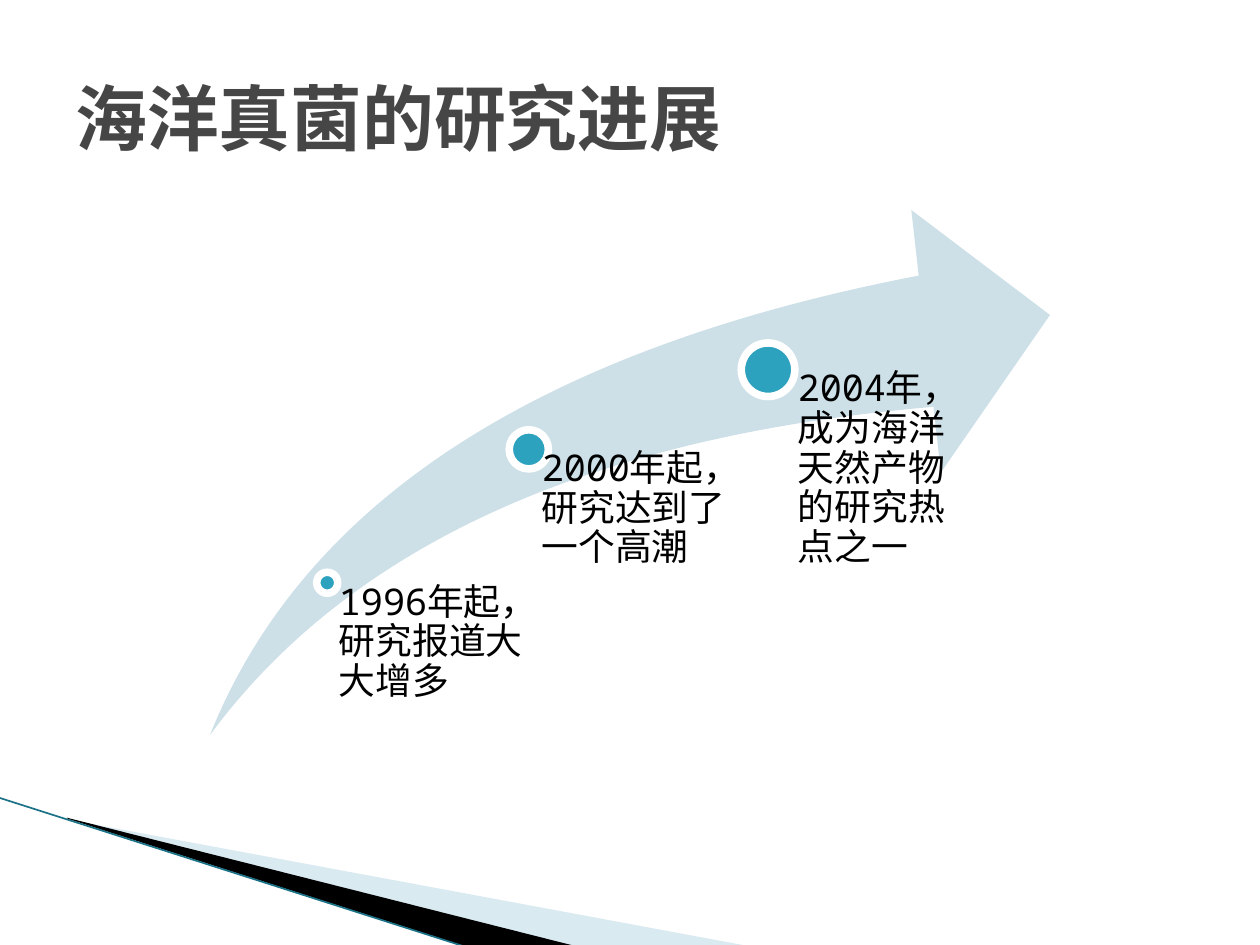
import lxml.etree
import pptx
import pptx.dml.color
import pptx.enum.shapes
import pptx.enum.text
import pptx.oxml.ns
import pptx.util

FONT = "Noto Sans Mono"
ACCENT = "2DA2BF"
MILESTONES = [
    ((181, 327, 12), (187.2, 333.4, 111.6, 86.4), 6.5, "1996年起，研究报道大大增多"),
    ((291, 245.6, 22.4), (297.4, 257, 124.6, 163.4), 12.2, "2000年起，研究达到了一个高潮"),
    ((423.6, 196, 30.6), (439.2, 211.5, 115.2, 208.8), 16.7, "2004年，成为海洋天然产物的研究热点之一"),
]


def points(*values):
    """Convert numbers of points to lengths."""
    return [pptx.util.Pt(value) for value in values]


def rgb(color):
    """Turn a hex string into a colour."""
    return pptx.dml.color.RGBColor.from_string(color)


def add_element(parent, tag, **attributes):
    """Append a drawing element to an XML parent."""
    return lxml.etree.SubElement(parent, pptx.oxml.ns.qn(tag), **attributes)


def paint(shape, color, line_color=None, line_width=0):
    """Give a shape a solid fill, an optional outline and no shadow."""
    shape.shadow.inherit = False
    shape.fill.solid()
    shape.fill.fore_color.rgb = rgb(color)
    if line_color:
        shape.line.color.rgb = rgb(line_color)
        shape.line.width = pptx.util.Pt(line_width)
    else:
        shape.line.fill.background()
    return shape


def add_shape(slide, kind, box, color, **outline):
    """Add a painted preset shape."""
    return paint(slide.shapes.add_shape(kind, *points(*box)), color, **outline)


def add_wedge(slide, corners, color, opacity=100):
    """Add a closed polygon with an opacity in percent."""
    start, *others = [points(*corner) for corner in corners]
    builder = slide.shapes.build_freeform(*start, scale=1.0)
    builder.add_line_segments(others, close=True)
    shape = paint(builder.convert_to_shape(), color)
    if opacity < 100:
        swatch = next(shape.element.spPr.iter(pptx.oxml.ns.qn("a:srgbClr")))
        add_element(swatch, "a:alpha", val=str(opacity * 1000))


def add_line(slide, start, end, color, width):
    """Add a straight line without a shadow."""
    straight = pptx.enum.shapes.MSO_CONNECTOR.STRAIGHT
    line = slide.shapes.add_connector(straight, *points(*start, *end))
    line.line.color.rgb = rgb(color)
    line.line.width = pptx.util.Pt(width)
    add_element(line.element.spPr, "a:effectLst")


def add_text(slide, text, box, *, size, color="000000", bold=False, spacing=1.0,
             margins=(0, 0, 0, 0), anchor=pptx.enum.text.MSO_ANCHOR.TOP):
    """Add a wrapped text box with one paragraph."""
    frame = slide.shapes.add_textbox(*points(*box)).text_frame
    frame.word_wrap = True
    frame.vertical_anchor = anchor
    (frame.margin_left, frame.margin_top,
     frame.margin_right, frame.margin_bottom) = points(*margins)
    paragraph = frame.paragraphs[0]
    paragraph.line_spacing = spacing
    run = paragraph.add_run()
    run.text = text
    run.font.size = pptx.util.Pt(size)
    run.font.bold = bold
    run.font.color.rgb = rgb(color)
    run.font.name = FONT
    add_element(run.font._element, "a:ea", typeface=FONT)


def add_milestone(slide, dot, box, indent, text):
    """Add a dot on the arrow and its description."""
    left, top, diameter = dot
    add_shape(slide, pptx.enum.shapes.MSO_SHAPE.OVAL, (left, top, diameter, diameter),
              ACCENT, line_color="FFFFFF", line_width=4.33)
    add_text(slide, text, box, size=21, spacing=0.9, margins=(indent, 0, 0, 0))


def main():
    """Build the slide and save it."""
    presentation = pptx.Presentation()
    presentation.slide_width, presentation.slide_height = points(720, 540)
    slide = presentation.slides.add_slide(presentation.slide_layouts[6])

    add_wedge(slide, [(39.6, 468.5), (428.4, 540.7), (328.3, 540.7), (39.6, 468)],
              "A0CBDC", opacity=40)
    add_wedge(slide, [(38.2, 467.3), (329, 540.7), (267.8, 541.4), (38.9, 468)], "000000")
    add_line(slide, (-0.7, 455.8), (267.1, 541.4), "1B7286", 0.95)

    add_text(slide, "海洋真菌的研究进展", (36, 21.6, 648, 90), size=41, color="464646",
             bold=True, margins=(7.2, 3.6, 7.2, 3.6),
             anchor=pptx.enum.text.MSO_ANCHOR.MIDDLE)

    arrow = add_shape(slide, pptx.enum.shapes.MSO_SHAPE.SWOOSH_ARROW,
                      (120, 120, 480, 300), "CDE0E8")
    arrow.adjustments[0] = 0.25
    arrow.adjustments[1] = 0.25
    for milestone in MILESTONES:
        add_milestone(slide, *milestone)

    presentation.save("out.pptx")


if __name__ == "__main__":
    main()
